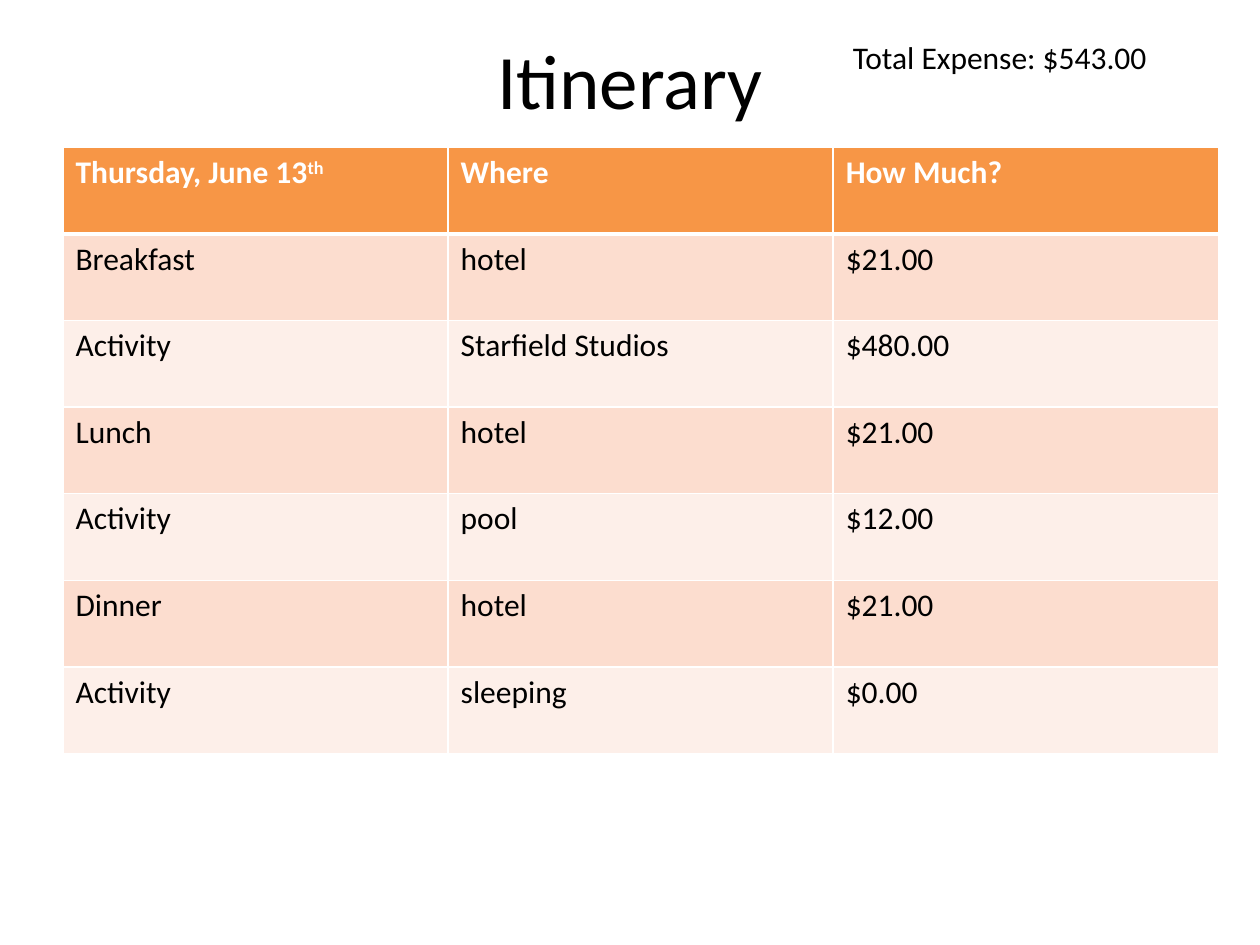
from lxml import etree
from pptx import Presentation
from pptx import util as u
from pptx.dml import color
from pptx.enum import text
from pptx.oxml import ns

ROWS = [
    ("Thursday, June 13", "Where", "How Much?"),
    ("Breakfast", "hotel", "$21.00"),
    ("Activity", "Starfield Studios", "$480.00"),
    ("Lunch", "hotel", "$21.00"),
    ("Activity", "pool", "$12.00"),
    ("Dinner", "hotel", "$21.00"),
    ("Activity", "sleeping", "$0.00"),
]


def rgb(code):
    return color.RGBColor.from_string(code)


class Page:
    font = "Calibri"
    ink = "000000"
    white = "FFFFFF"
    head = "F79646"
    bands = ("FDEFE9", "FCDDCF")

    def __init__(self, slide):
        self.slide = slide

    def style(self, run, size, ink, bold=False):
        run.font.name = self.font
        run.font.size = u.Pt(size)
        run.font.bold = bold
        run.font.color.rgb = rgb(ink)

    def label(self, words, box, size, align, anchor):
        shape = self.slide.shapes.add_textbox(*map(u.Inches, box))
        frame = shape.text_frame
        frame.word_wrap = True
        frame.vertical_anchor = anchor
        frame.text = words
        para = frame.paragraphs[0]
        para.alignment = align
        self.style(para.runs[0], size, self.ink)

    def edge(self, cell, side, width):
        props = cell._tc.get_or_add_tcPr()
        line = etree.SubElement(props, ns.qn("a:ln" + side), w=str(u.Pt(width)))
        fill = etree.SubElement(line, ns.qn("a:solidFill"))
        etree.SubElement(fill, ns.qn("a:srgbClr"), val=self.white)

    def cell(self, cell, words, row):
        # Borders go before the fill in the cell properties
        rule = {"T": 3 if row == 1 else 1, "B": 3 if row == 0 else 1}
        for side in "LRTB":
            self.edge(cell, side, rule.get(side, 1))
        cell.fill.solid()
        cell.fill.fore_color.rgb = rgb(self.bands[row % 2] if row else self.head)
        cell.text_frame.text = words
        run = cell.text_frame.paragraphs[0].runs[0]
        self.style(run, 18, self.ink if row else self.white, row == 0)

    def table(self, rows, box):
        size = len(rows), len(rows[0])
        table = self.slide.shapes.add_table(*size, *map(u.Inches, box)).table
        for r, line in enumerate(rows):
            for c, words in enumerate(line):
                self.cell(table.cell(r, c), words, r)
        return table

    def raised(self, cell, words):
        run = cell.text_frame.paragraphs[0].add_run()
        run.text = words
        self.style(run, 18, self.white, True)
        run._r.get_or_add_rPr().set("baseline", "30000")


def main():
    deck = Presentation()
    deck.slide_width, deck.slide_height = u.Inches(10), u.Inches(7.5)
    page = Page(deck.slides.add_slide(deck.slide_layouts[6]))

    # Title and total
    page.label("Itinerary", (0.5, 0, 9, 1.25), 44,
               text.PP_ALIGN.CENTER, text.MSO_ANCHOR.MIDDLE)
    page.label("Total Expense: $543.00", (6.67, 0.25, 3.08, 0.4), 18,
               text.PP_ALIGN.LEFT, text.MSO_ANCHOR.TOP)

    # Day plan
    plan = page.table(ROWS, (0.5, 1.17, 9.17, 4.81))
    page.raised(plan.cell(0, 0), "th")

    deck.save("out.pptx")


if __name__ == "__main__":
    main()
